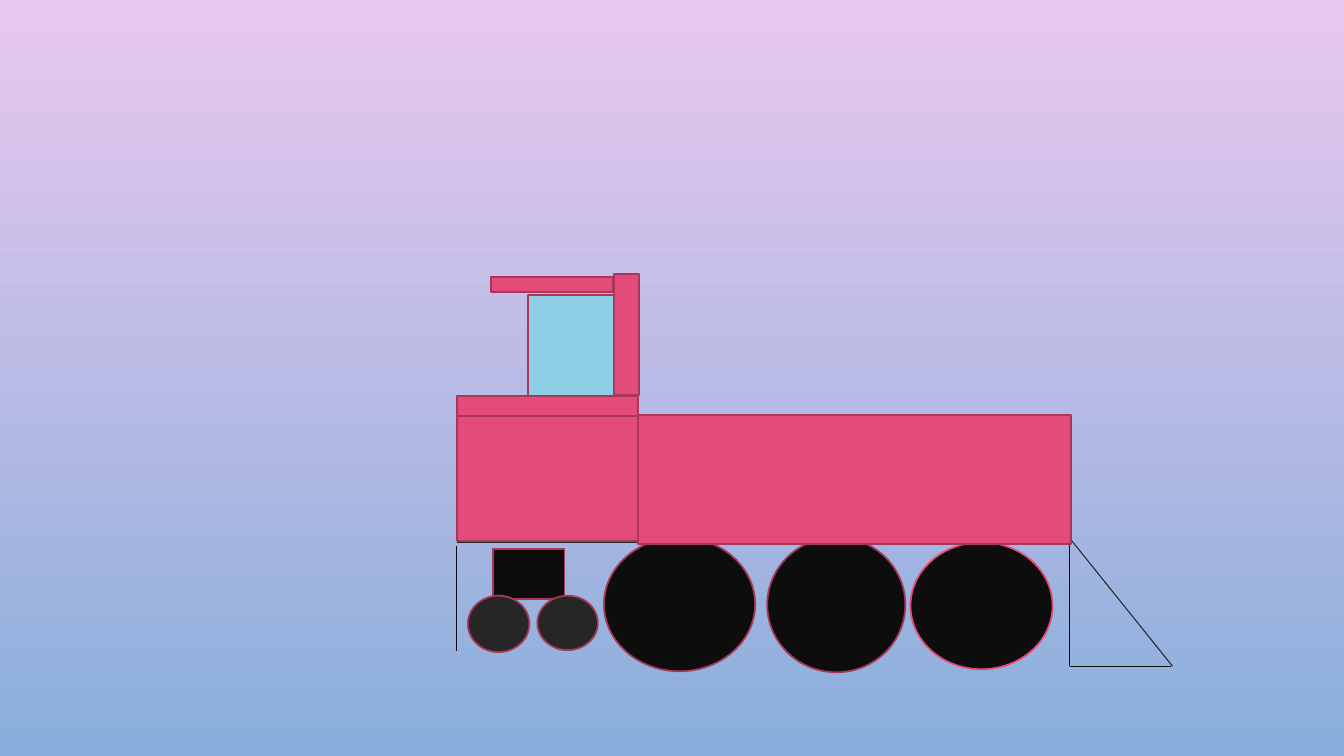
import dataclasses

import lxml.etree
import pptx
import pptx.dml.color
import pptx.enum.shapes
import pptx.oxml.ns
import pptx.util

Inches = pptx.util.Inches
Pt = pptx.util.Pt
Kind = pptx.enum.shapes.MSO_SHAPE


@dataclasses.dataclass(frozen=True)
class Theme:
    sky: str = "E9C8EF"
    ground: str = "89AEDB"
    body: str = "E34B7A"
    edge: str = "A8375A"
    glass: str = "8ECFE6"
    black: str = "0D0D0D"
    gray: str = "262626"
    border: float = 1.25
    wire: float = 0.75


THEME = Theme()


def rgb(code):
    return pptx.dml.color.RGBColor.from_string(code)


def paint_sky(slide):
    fill = slide.background.fill
    fill.gradient()
    fill.gradient_angle = 270
    for stop, code in zip(fill.gradient_stops, (THEME.sky, THEME.ground)):
        stop.color.rgb = rgb(code)


def add_part(slide, kind, box, fill, edge=THEME.edge):
    part = slide.shapes.add_shape(kind, *map(Inches, box))
    part.shadow.inherit = False
    part.fill.solid()
    part.fill.fore_color.rgb = rgb(fill)
    part.line.color.rgb = rgb(edge)
    part.line.width = Pt(THEME.border)


def add_wire(slide, start, end, color):
    wire = slide.shapes.add_connector(
        pptx.enum.shapes.MSO_CONNECTOR.STRAIGHT, *map(Inches, start + end))
    wire.line.color.rgb = rgb(color)
    wire.line.width = Pt(THEME.wire)
    props = wire._element.spPr
    lxml.etree.SubElement(props, pptx.oxml.ns.qn("a:effectLst"))


def add_wheels(slide):
    wheels = [
        ((5.99, 5.33, 1.5, 1.33), THEME.edge),
        ((7.61, 5.33, 1.37, 1.34), THEME.edge),
        ((9.03, 5.38, 1.41, 1.26), THEME.body),
    ]
    for box, edge in wheels:
        add_part(slide, Kind.OVAL, box, THEME.black, edge)


def add_frame(slide):
    """Draw the cowcatcher triangle, the base line and the rear post."""
    top, foot, tip = (10.61, 5.34), (10.61, 6.61), (11.63, 6.61)
    wires = [
        (top, tip, THEME.gray),
        (foot, (11.61, 6.61), THEME.black),
        (top, foot, THEME.black),
        ((10.61, 5.38), (4.53, 5.38), THEME.gray),
        ((4.53, 5.42), (4.53, 6.46), THEME.black),
    ]
    for start, end, color in wires:
        add_wire(slide, start, end, color)


def add_truck(slide):
    """Draw the small rear wheels and the block that carries them."""
    add_part(slide, Kind.RECTANGLE, (4.89, 5.45, 0.71, 0.49), THEME.black)
    for box in [(4.64, 5.91, 0.61, 0.56), (5.33, 5.91, 0.6, 0.54)]:
        add_part(slide, Kind.OVAL, box, THEME.gray)


def add_body(slide):
    panels = [
        ((4.53, 4.13, 1.82, 1.24), THEME.body),   # cab
        ((6.33, 4.12, 4.29, 1.28), THEME.body),   # boiler
        ((4.53, 3.93, 1.8, 0.2), THEME.body),     # sill
        ((5.24, 2.93, 0.85, 1), THEME.glass),     # window
        ((6.09, 2.72, 0.25, 1.2), THEME.body),    # pillar
        ((4.87, 2.75, 1.21, 0.15), THEME.body),   # roof
    ]
    for box, fill in panels:
        add_part(slide, Kind.RECTANGLE, box, fill)


def main():
    deck = pptx.Presentation()
    deck.slide_width = Inches(13.33)
    deck.slide_height = Inches(7.5)
    slide = deck.slides.add_slide(deck.slide_layouts.get_by_name("Blank"))
    paint_sky(slide)
    add_wheels(slide)
    add_frame(slide)
    add_truck(slide)
    add_body(slide)
    deck.save("out.pptx")


if __name__ == "__main__":
    main()
